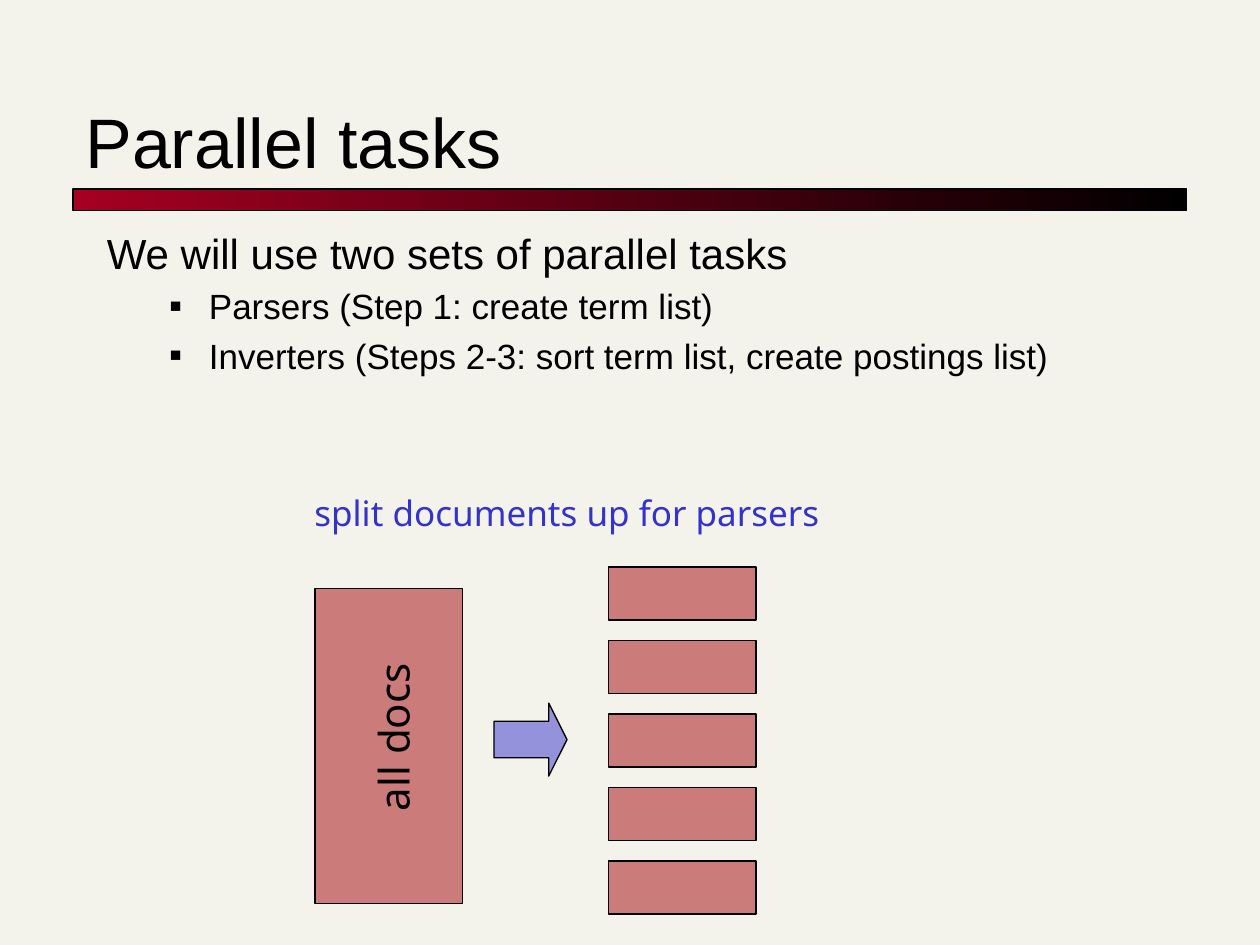
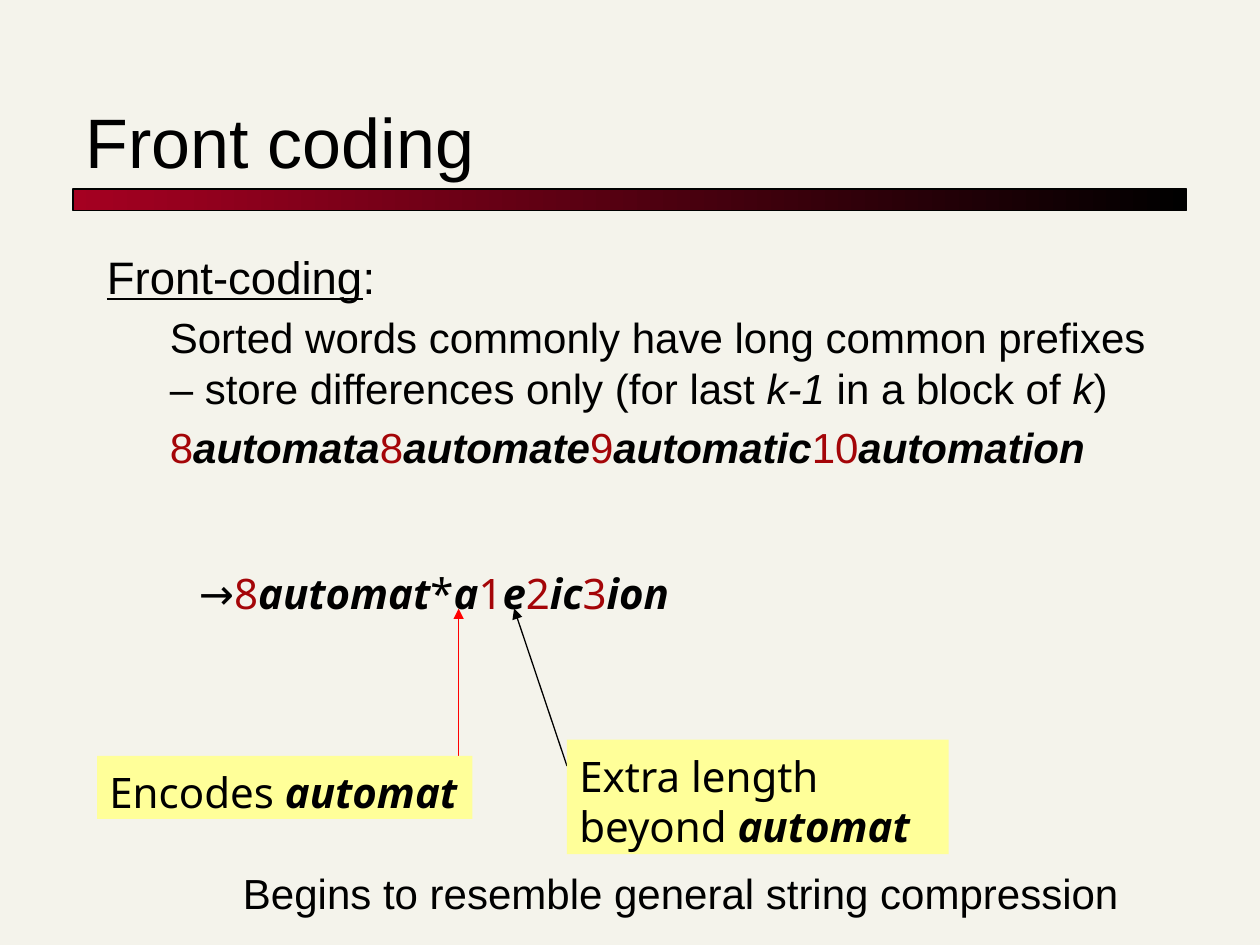
"""Build two lecture slides on parallel indexing tasks and front coding."""
from typing import NamedTuple

from lxml import etree
from pptx import Presentation
from pptx.dml.color import RGBColor
from pptx.enum.shapes import MSO_CONNECTOR, MSO_SHAPE
from pptx.enum.text import MSO_ANCHOR, PP_ALIGN
from pptx.oxml.ns import qn
from pptx.util import Inches, Pt

RECT = MSO_SHAPE.RECTANGLE
ARROW = MSO_SHAPE.RIGHT_ARROW
STRAIGHT = MSO_CONNECTOR.STRAIGHT
TOP, MIDDLE, BOTTOM = MSO_ANCHOR.TOP, MSO_ANCHOR.MIDDLE, MSO_ANCHOR.BOTTOM
LEFT, CENTER = PP_ALIGN.LEFT, PP_ALIGN.CENTER


class Theme(NamedTuple):
    background: str = "F4F3EB"
    ink: str = "000000"
    band: str = "A50021"
    accent: str = "A40508"
    blue: str = "3333CC"
    red: str = "FF0000"
    note: str = "FFFF99"
    body_font: str = "Arial"
    label_font: str = "Noto Sans"
    title: int = 40
    lead: int = 26
    text: int = 24
    small: int = 20
    leading: float = 1.21
    para_gap: float = 0.2
    hairline: float = 0.75


THEME = Theme()


class Run(NamedTuple):
    text: str
    color: str = THEME.ink
    bold: bool = False
    italic: bool = False
    underline: bool = False


class Para(NamedTuple):
    runs: list
    size: int = THEME.text
    indent: float = 0
    bullet: str = ""


def strong(text):
    return Run(text, bold=True, italic=True)


def coded(*pairs):
    runs = []
    for length, word in pairs:
        runs += [Run(length, THEME.accent), strong(word)]
    return runs


def rgb(color):
    return RGBColor.from_string(color)


class Deck:
    def __init__(self, theme):
        self.theme = theme
        self.prs = Presentation()
        self.prs.slide_width, self.prs.slide_height = Inches(10), Inches(7.5)
        fill = self.prs.slide_master.background.fill
        fill.solid()
        fill.fore_color.rgb = rgb(theme.background)

    def slide(self, title):
        self.s = self.prs.slides.add_slide(self.prs.slide_layouts[6])
        band = self.shape(RECT, 0.58, 1.5, 8.84, 0.17, self.theme.band)
        band.fill.gradient()
        band.fill.gradient_angle = 0
        for stop, color in zip(band.fill.gradient_stops, (self.theme.band, self.theme.ink)):
            stop.color.rgb = rgb(color)
        self.text(0.58, 0.42, 8.83, 1.08, [Para([Run(title)], self.theme.title)], anchor=BOTTOM)

    def shape(self, kind, x, y, w, h, color, alpha=None, outline=True):
        sp = self.s.shapes.add_shape(kind, Inches(x), Inches(y), Inches(w), Inches(h))
        sp.shadow.inherit = False
        sp.fill.solid()
        sp.fill.fore_color.rgb = rgb(color)
        if alpha:
            clr = sp._element.spPr.find(qn("a:solidFill"))[0]
            etree.SubElement(clr, qn("a:alpha"), val=str(alpha * 1000))
        if outline:
            sp.line.color.rgb = rgb(self.theme.ink)
            sp.line.width = Pt(self.theme.hairline)
        else:
            sp.line.fill.background()
        return sp

    def text(self, x, y, w, h, paras, font=None, anchor=TOP, align=LEFT):
        sp = self.s.shapes.add_textbox(Inches(x), Inches(y), Inches(w), Inches(h))
        self.set_text(sp, paras, font or self.theme.body_font, anchor, align)
        return sp

    def label(self, x, y, w, h, paras, **style):
        return self.text(x, y, w, h, paras, self.theme.label_font, **style)

    def note(self, x, y, w, h, paras):
        sp = self.shape(RECT, x, y, w, h, self.theme.note, outline=False)
        self.set_text(sp, paras, self.theme.label_font, TOP, LEFT)

    def set_text(self, sp, paras, font, anchor, align):
        tf = sp.text_frame
        tf.word_wrap = True
        tf.vertical_anchor = anchor
        if font == self.theme.label_font:
            tf.margin_top = Inches(0.08)
        for i, para in enumerate(paras):
            p = tf.paragraphs[0] if i == 0 else tf.add_paragraph()
            p.alignment = align
            p.line_spacing = Pt(para.size * self.theme.leading)
            if i and font == self.theme.body_font:
                p.space_before = Pt(para.size * self.theme.para_gap)
            self.indent(p, para)
            for run in para.runs:
                r = p.add_run()
                r.text = run.text
                r.font.name, r.font.size = font, Pt(para.size)
                r.font.color.rgb = rgb(run.color)
                r.font.bold, r.font.italic = run.bold, run.italic
                r.font.underline = run.underline

    def indent(self, p, para):
        hang = 0.31 if para.bullet else 0
        pPr = p._p.get_or_add_pPr()
        pPr.set("marL", str(Inches(para.indent + hang)))
        pPr.set("indent", str(-Inches(hang)))
        if para.bullet:
            clr = etree.SubElement(pPr, qn("a:buClr"))
            etree.SubElement(clr, qn("a:srgbClr"), val=self.theme.ink)
            etree.SubElement(pPr, qn("a:buSzPct"), val="55000")
            etree.SubElement(pPr, qn("a:buFont"), typeface=self.theme.body_font)
            etree.SubElement(pPr, qn("a:buChar"), char=para.bullet)

    def pointer(self, x1, y1, x2, y2, color, width):
        c = self.s.shapes.add_connector(STRAIGHT, Inches(x1), Inches(y1), Inches(x2), Inches(y2))
        c.line.color.rgb = rgb(color)
        c.line.width = Pt(width)
        spPr = c._element.spPr
        etree.SubElement(spPr.find(qn("a:ln")), qn("a:tailEnd"), type="triangle")
        etree.SubElement(spPr, qn("a:effectLst"))


def parallel_tasks(deck):
    t = deck.theme
    deck.slide("Parallel tasks")
    tasks = ("Parsers (Step 1: create term list)",
             "Inverters (Steps 2-3: sort term list, create postings list)")
    deck.text(0.75, 1.75, 8.5, 1.58, [
        Para([Run("We will use two sets of parallel tasks")]),
        *(Para([Run(task)], t.small, 0.5, "■") for task in tasks)])
    deck.shape(RECT, 2.5, 4.67, 1.17, 2.5, t.accent, 50)
    for i in range(5):
        deck.shape(RECT, 4.83, 4.5 + i * 7 / 12, 1.17, 0.42, t.accent, 50)
    deck.shape(ARROW, 3.92, 5.58, 0.58, 0.58, t.blue, 50).adjustments[1] = 0.25
    deck.label(1.75, 3.83, 5.5, 0.44,
               [Para([Run("split documents up for parsers", t.blue)], t.small)],
               anchor=MIDDLE, align=CENTER)
    deck.label(2.36, 5.56, 1.45, 0.5, [Para([Run("all docs")])]).rotation = 270


def front_coding(deck):
    t = deck.theme
    deck.slide("Front coding")
    deck.text(0.75, 1.92, 8.5, 2.42, [
        Para([Run("Front-coding", underline=True), Run(":")], t.lead),
        Para([Run("Sorted words commonly have long common prefixes – "
                  "store differences only (for last "),
              Run("k-1", italic=True), Run(" in a block of "),
              Run("k", italic=True), Run(")")], indent=0.5),
        Para(coded(("8", "automata"), ("8", "automate"),
                   ("9", "automatic"), ("10", "automation")), indent=0.5)])
    deck.label(1.48, 4.42, 4.46, 0.5, [Para([
        Run("→"), *coded(("8", "automat")), Run("*"), strong("a"),
        *coded(("1", "e"), ("2", "ic"), ("3", "ion"))])])
    deck.pointer(3.64, 6.08, 3.64, 4.83, t.red, 1)
    deck.note(0.77, 6, 2.98, 0.5, [Para([Run("Encodes "), strong("automat")])])
    deck.pointer(4.5, 6.08, 4.08, 4.83, t.ink, t.hairline)
    deck.note(4.5, 5.87, 3.03, 0.91, [
        Para([Run("Extra length")]),
        Para([Run("beyond "), strong("automat")])])
    deck.text(1.83, 6.83, 7.25, 0.5,
              [Para([Run("Begins to resemble general string compression")])])


def main():
    deck = Deck(THEME)
    parallel_tasks(deck)
    front_coding(deck)
    deck.prs.save("out.pptx")


if __name__ == "__main__":
    main()
